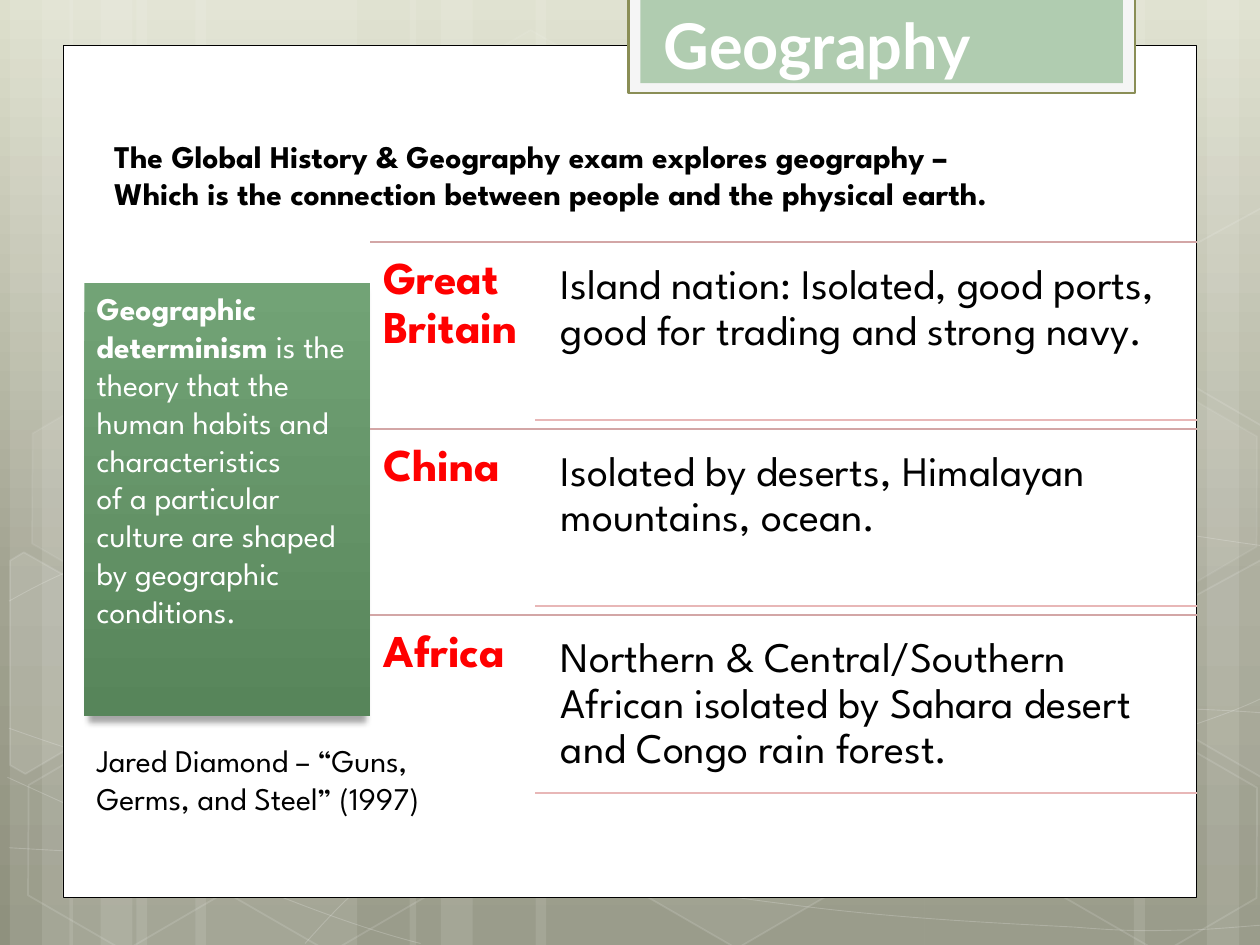
from copy import deepcopy
from math import cos, radians, sin
from lxml.etree import SubElement
from pptx import Presentation
from pptx.dml.color import RGBColor
from pptx.enum.shapes import MSO_CONNECTOR, MSO_SHAPE
from pptx.enum.text import MSO_ANCHOR, PP_ALIGN
from pptx.oxml.ns import qn
from pptx.util import Cm, Pt

FONT = "League Spartan"
WHITE, BLACK, RED = "FFFFFF", "000000", "FF0000"

# Backdrop strips: left, width
STRIPS = [(2.75, 4.45), (0.2, 1.27), (0.85, 2.12), (3.94, 4.45), (1.4, 1.27), (2.03, 2.12),
          (18.63, 4.45), (24.33, 1.27), (22.86, 2.12), (10.8, 7.83), (8.26, 1.27), (8.89, 2.12)]

# Backdrop curves: a start, then two control points and an end per piece
CURVES = [
    [(0.18, 17.09), (1.55, 17.17), (2.92, 17.25), (4.83, 17.22), (6.73, 17.2), (9.09, 17.15),
     (11.63, 16.89), (14.17, 16.64), (17.78, 16.15), (20.12, 15.67), (22.43, 15.19),
     (24.82, 14.43), (25.58, 14)],
    [(0.18, 12.12), (0.91, 11.71), (1.65, 11.33), (3.07, 10.95), (4.52, 10.57), (6.58, 10.01),
     (8.81, 9.83), (11.07, 9.65), (13.82, 9.63), (16.61, 9.83), (19.41, 10.03),
     (24.05, 10.82), (25.58, 11.02)],
    [(0.15, 15.67), (3.23, 17.07), (6.27, 18.47), (8.48, 19.02)],
    [(0.18, 14.68), (0.97, 14.96), (1.78, 15.24), (3.25, 15.65), (4.72, 16.03), (6.93, 16.66),
     (9.07, 17.09), (11.18, 17.53), (13.84, 17.98), (15.95, 18.24), (18.06, 18.52),
     (20.32, 18.62), (21.67, 18.69), (22.99, 18.8), (23.34, 18.75), (24, 18.75),
     (24.66, 18.72), (25.12, 18.67), (25.58, 18.64)],
    [(6.15, 19.02), (6.6, 18.52), (7.06, 18.01), (7.67, 17.55), (8.28, 17.09), (9.14, 16.59),
     (9.86, 16.23), (10.57, 15.88), (11, 15.72), (11.94, 15.47), (12.85, 15.21), (14.55, 14.86),
     (15.44, 14.68), (16.36, 14.5), (16.48, 14.5), (17.27, 14.45), (18.06, 14.38), (19.3, 14.3),
     (20.17, 14.27), (21.06, 14.25), (22.5, 14.27), (22.5, 14.27), (23.5, 14.27), (24.6, 14.3),
     (25.55, 14.38)]]

# Hexagons: left, top, fill and line opacity in percent
CELLS = [(8.48, 0.91, 4, 8), (12.62, 14.96, 6, 12), (0.28, 15.01, 0, 12), (0.36, 7.92, 7, 8),
         (4.42, 15.04, 0, 12), (19.13, 11.51, 10, 12), (21.18, 15.06, 0, 12), (21.18, 7.98, 7, 8)]

# Hexagons cut by the slide edge: corners
LEFT = [(0.2, 11.3), (0.48, 11.13), (2.44, 12.24), (2.41, 14.48), (0.51, 15.6), (0.2, 15.42)]
RIGHT = [(23.52, 12.32), (25.43, 11.28), (25.63, 11.33), (25.63, 15.57), (25.45, 15.67),
         (23.52, 14.55)]

ROWS = [("Great Britain", "Island nation: Isolated, good ports, good for trading and strong navy."),
        ("China", "Isolated by deserts, Himalayan mountains, ocean."),
        ("Africa", "Northern & Central/Southern African isolated by Sahara desert "
                   "and Congo rain forest.")]


def tint(color):
    return RGBColor.from_string(color)


def fade(part, percent):
    for hue in part.iter(qn("a:srgbClr")):
        SubElement(hue, qn("a:alpha"), val=str(percent * 1000))


def blend(fill, owner, stops):
    """Fill from top to bottom with (position, colour) stops."""
    fill.gradient()
    fill.gradient_angle = 270
    holder = owner.xpath(".//a:gsLst")[0]
    while len(holder) < len(stops):
        holder.append(deepcopy(holder[0]))
    for stop, (place, color) in zip(fill.gradient_stops, stops):
        stop.position = place
        stop.color.rgb = tint(color)


def paint(shape, fill=None, line=None, width=1, clear=None, faint=None):
    shape.shadow.inherit = False
    if fill and clear != 0:
        shape.fill.solid()
        shape.fill.fore_color.rgb = tint(fill)
        if clear:
            fade(shape.element.spPr.find(qn("a:solidFill")), clear)
    else:
        shape.fill.background()
    if line:
        shape.line.color.rgb = tint(line)
        shape.line.width = Pt(width)
        if faint:
            fade(shape.element.spPr.find(qn("a:ln")), faint)
    else:
        shape.line.fill.background()
    return shape


def block(slide, box, kind=MSO_SHAPE.RECTANGLE):
    return slide.shapes.add_shape(kind, *map(Cm, box))


def trace(slide, points, close=False):
    pen = slide.shapes.build_freeform(*map(Cm, points[0]))
    pen.add_line_segments([(Cm(x), Cm(y)) for x, y in points[1:]], close)
    return pen.convert_to_shape()


def bend(shape):
    """Turn each three straight segments into one cubic curve."""
    lines = shape.element.xpath(".//a:lnTo")
    for i in range(0, len(lines), 3):
        curve = lines[i]
        curve.tag = qn("a:cubicBezTo")
        for line in lines[i + 1:i + 3]:
            curve.append(line[0])
            line.getparent().remove(line)
    return shape


def turn(points, mid, angle=30):
    """Turn the points back, so that the shape's rotation restores them."""
    c, s = cos(radians(angle)), sin(radians(angle))
    return [(mid[0] + (x - mid[0]) * c + (y - mid[1]) * s,
             mid[1] - (x - mid[0]) * s + (y - mid[1]) * c) for x, y in points]


def style(frame, size, color, bold=False, font=FONT):
    for para in frame.paragraphs:
        for run in para.runs:
            run.font.size, run.font.bold, run.font.name = Pt(size), bold, font
            run.font.color.rgb = tint(color)


def write(slide, box, text, size, color=BLACK, bold=False, font=FONT,
          inset=None, space=None, wrap=True):
    frame = slide.shapes.add_textbox(*map(Cm, box)).text_frame
    frame.text = text
    frame.word_wrap = wrap
    if inset:
        frame.margin_left = frame.margin_right = Cm(inset)
        frame.margin_top = frame.margin_bottom = Cm(inset)
    if space:
        frame.paragraphs[0].line_spacing = space
    style(frame, size, color, bold, font)


def rule(slide, left, right, top, color):
    line = slide.shapes.add_connector(MSO_CONNECTOR.STRAIGHT, *map(Cm, (left, top, right, top)))
    line.line.color.rgb = tint(color)
    line.line.width = Pt(1.25)
    SubElement(line.element.spPr, qn("a:effectLst"))


def backdrop(slide, height):
    blend(slide.background.fill, slide.element, [(0, "DDDFCC"), (0.62, "A2A391"), (1, "8F917E")])
    for left, width in STRIPS:
        paint(block(slide, (left, 0, width, height)), WHITE, clear=10)
    for knots in CURVES:
        paint(bend(trace(slide, knots)), line=WHITE, width=0.5, faint=20)
    for left, top, clear, faint in CELLS:
        cell = block(slide, (left, top, 4.45, 3.86), MSO_SHAPE.HEXAGON)
        cell.adjustments[0] = 0.285
        cell.rotation = 30
        paint(cell, WHITE, WHITE, clear=clear, faint=faint)
    upper = [(x, y - 7.09) for x, y in RIGHT]
    for points, mid, clear in ((LEFT, (0.91, 13.59), 10), (RIGHT, (25.02, 13.21), 4),
                               (upper, (25.02, 6.12), 0)):
        cut = paint(trace(slide, turn(points, mid), True), WHITE, WHITE, clear=clear, faint=12)
        cut.rotation = 30


def banner(slide, left, top, width, height):
    paint(block(slide, (left, top, width, height)), "F5F5F5", "8A8E56", 1.25)
    paint(block(slide, (left + 0.24, top, width - 0.48, height - 0.2)), "B0CCB0")
    write(slide, (left + 0.46, top + 0.05, width - 0.89, 1.8), "Geography", 36, WHITE, True, "Lato")


def theory(slide, left, top, width, height):
    panel = paint(block(slide, (left, top, width, height)))
    blend(panel.fill, panel.element, [(0, "72A376"), (1, "57855A")])
    shade = SubElement(panel.element.spPr.find(qn("a:effectLst")), qn("a:outerShdw"),
                       blurRad=str(Pt(3.5)), dist=str(Pt(4)), dir="5400000", sx="97000")
    SubElement(shade, qn("a:srgbClr"), val=BLACK)
    fade(shade, 34)
    frame = panel.text_frame
    frame.word_wrap, frame.vertical_anchor = True, MSO_ANCHOR.TOP
    frame.text = "Geographic determinism "
    para = frame.paragraphs[0]
    para.alignment = PP_ALIGN.LEFT
    para.add_run().text = "is the theory that the human habits and characteristics "
    para.add_line_break()
    para.add_run().text = "of a particular culture are shaped by geographic conditions."
    style(frame, 18, WHITE)
    para.runs[0].font.bold = True


def places(slide, left, top, width, height):
    """Stack the places, each with a name column and a wide text column."""
    step, name, gap, right = height / len(ROWS), 3.33, 0.18, left + width
    for i, (title, body) in enumerate(ROWS):
        y, start = top + i * step, left + name + 0.27
        rule(slide, left, right, y, "D3A6A6")
        write(slide, (left, y, name, step), title, 26, RED, True, inset=0.27, space=0.9)
        write(slide, (start, y + gap, right - start, step - 2 * gap), body, 24,
              inset=0.25, space=0.9)
        rule(slide, left + name, right, y + step - gap, "E8B7B7")


deck = Presentation()
deck.slide_width, deck.slide_height = Cm(25.4), Cm(19.05)
page = deck.slides.add_slide(deck.slide_layouts[6])
backdrop(page, 19.05)
# White sheet
paint(block(page, (1.27, 0.91, 22.86, 17.19)), WHITE, BLACK, 0.5)
banner(page, 12.67, -0.05, 10.21, 1.93)
# Introduction and book
write(page, (2.05, 2.63, 20.4, 1.8), "The Global History & Geography exam explores geography –\n"
      "Which is the connection between people and the physical earth.", 18, bold=True, wrap=False)
theory(page, 1.7, 5.71, 5.76, 8.72)
places(page, 7.46, 4.88, 16.67, 11.28)
write(page, (1.7, 14.81, 7.19, 2.57), "Jared Diamond – “Guns, Germs, and Steel” (1997)", 18)
deck.save("out.pptx")
